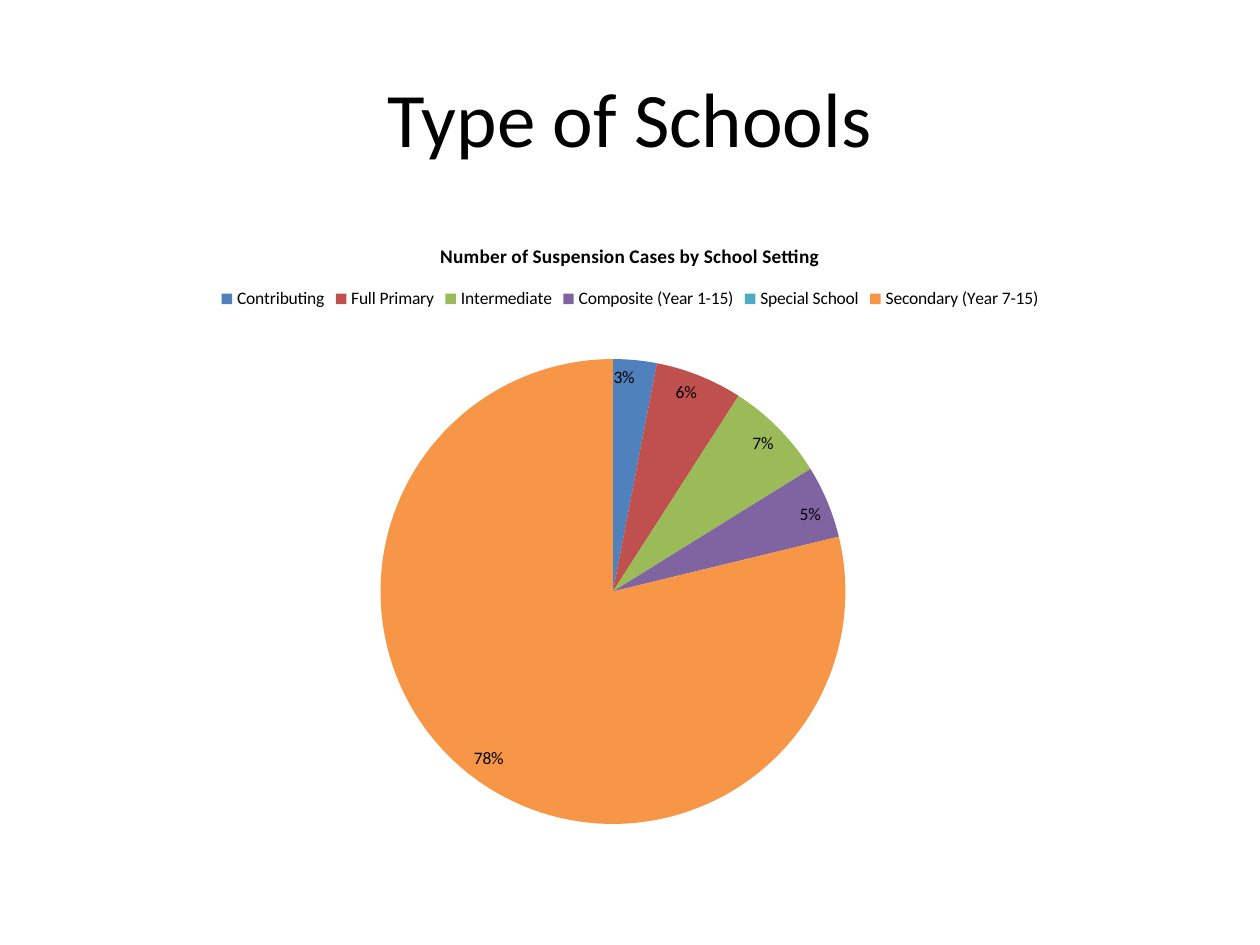
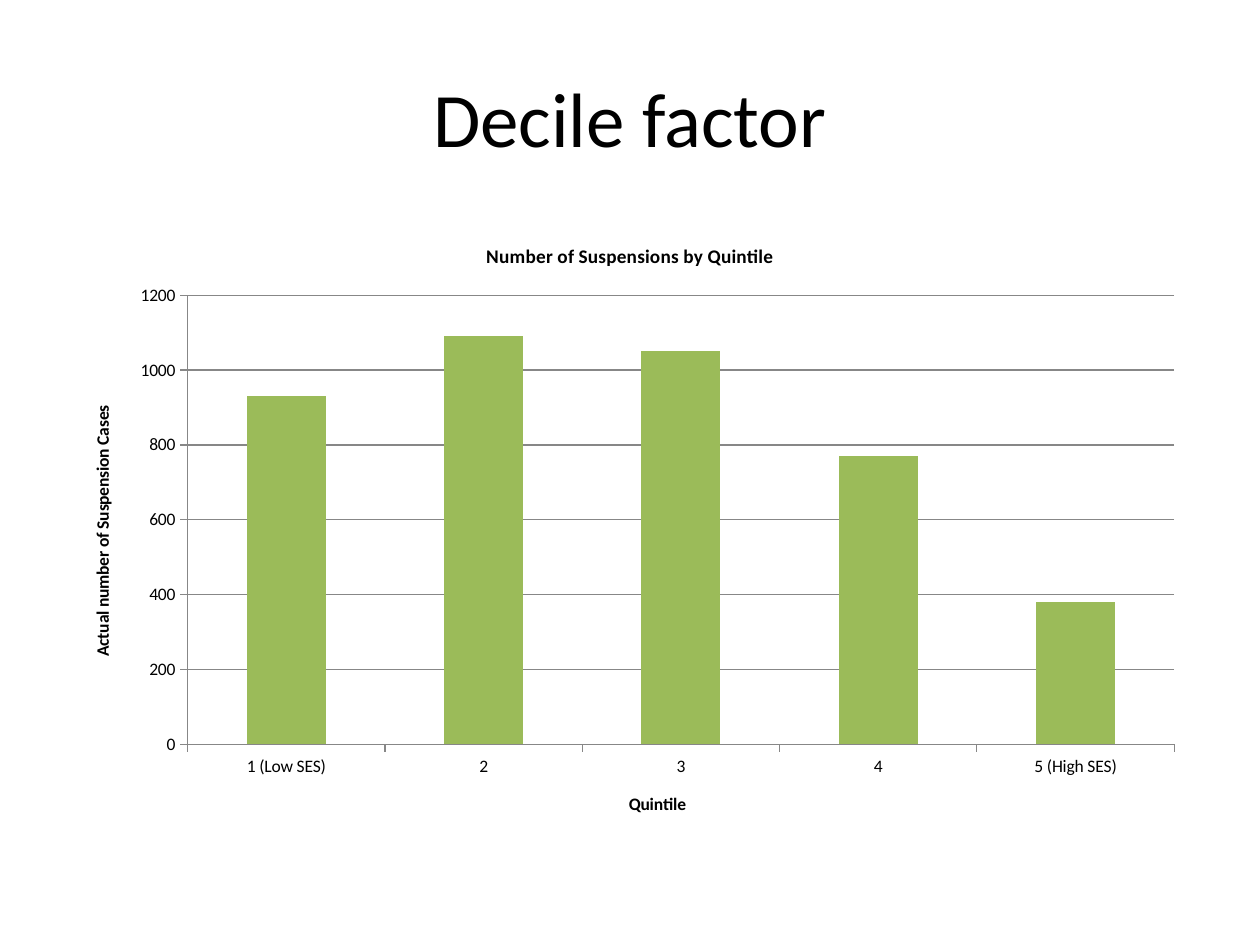
from typing import NamedTuple

from lxml.etree import SubElement
from pptx import Presentation
from pptx.chart.axis import CategoryAxis, ValueAxis
from pptx.chart.chart import Chart
from pptx.chart.data import CategoryChartData
from pptx.dml.color import RGBColor
from pptx.enum.chart import XL_CHART_TYPE, XL_LABEL_POSITION, XL_LEGEND_POSITION, XL_TICK_MARK
from pptx.enum.text import MSO_ANCHOR, PP_ALIGN
from pptx.oxml.ns import qn
from pptx.slide import Slide
from pptx.text.text import Font
from pptx.util import Inches, Pt

# Shared style
FONT = "Calibri"
BLACK = RGBColor(0x00, 0x00, 0x00)
AXIS_GREY = RGBColor(0x87, 0x87, 0x87)
BLUE = RGBColor(0x4F, 0x81, 0xBD)
RED = RGBColor(0xC0, 0x50, 0x4D)
GREEN = RGBColor(0x9B, 0xBB, 0x59)
PURPLE = RGBColor(0x80, 0x64, 0xA2)
TEAL = RGBColor(0x4B, 0xAC, 0xC6)
ORANGE = RGBColor(0xF7, 0x96, 0x46)

# Slide grid: 20 columns by 150 rows
SLIDE_WIDTH, SLIDE_HEIGHT = Inches(10), Inches(7.5)
COLUMN, ROW = SLIDE_WIDTH // 20, SLIDE_HEIGHT // 150


class Area(NamedTuple):
    """A place on the slide grid, or shares of a chart for a plot area."""
    left: float
    top: float
    width: float
    height: float

    def on_grid(self) -> tuple[int, int, int, int]:
        return (int(self.left * COLUMN), int(self.top * ROW),
                int(self.width * COLUMN), int(self.height * ROW))


TITLE_AREA = Area(1, 6, 18, 25)
CHART_AREA = Area(1, 35, 18, 99)


class ChartSlide(NamedTuple):
    heading: str
    chart_title: str
    kind: XL_CHART_TYPE
    values: dict[str, int]
    plot_area: Area
    number_format: str = "General"


SCHOOL_TYPES = ChartSlide(
    "Type of Schools", "Number of Suspension Cases by School Setting", XL_CHART_TYPE.PIE,
    {"Contributing": 3, "Full Primary": 6, "Intermediate": 7, "Composite (Year 1-15)": 5,
     "Special School": 0, "Secondary (Year 7-15)": 78},
    Area(0.28, 0.22, 0.41, 0.75), '0"%"')
SCHOOL_COLOURS = (BLUE, RED, GREEN, PURPLE, TEAL, ORANGE)

DECILES = ChartSlide(
    "Decile factor", "Number of Suspensions by Quintile", XL_CHART_TYPE.COLUMN_CLUSTERED,
    {"1 (Low SES)": 930, "2": 1090, "3": 1050, "4": 770, "5 (High SES)": 380},
    Area(0.11, 0.12, 0.87, 0.72))


def style_font(font: Font, size: float, bold: bool = False) -> None:
    font.name, font.size, font.bold = FONT, Pt(size), bold
    font.color.rgb = BLACK


def add_heading(slide: Slide, text: str) -> None:
    frame = slide.shapes.add_textbox(*TITLE_AREA.on_grid()).text_frame
    frame.word_wrap = True
    frame.vertical_anchor = MSO_ANCHOR.MIDDLE
    heading = frame.paragraphs[0]
    heading.text = text
    heading.alignment = PP_ALIGN.CENTER
    style_font(heading.font, 44)


def place_plot(chart: Chart, area: Area) -> None:
    """Fix the inner plot area as shares of the chart."""
    plot_area = chart.element.find(".//" + qn("c:plotArea"))
    for automatic in plot_area.findall(qn("c:layout")):
        plot_area.remove(automatic)
    layout = SubElement(plot_area, qn("c:layout"))
    plot_area.insert(0, layout)
    manual = SubElement(layout, qn("c:manualLayout"))
    settings = {"layoutTarget": "inner", "xMode": "edge", "yMode": "edge",
                "x": area.left, "y": area.top, "w": area.width, "h": area.height}
    for tag, value in settings.items():
        SubElement(manual, qn(f"c:{tag}")).set("val", str(value))


def add_chart_slide(deck: Presentation, content: ChartSlide) -> Chart:
    slide = deck.slides.add_slide(deck.slide_layouts[6])
    add_heading(slide, content.heading)
    data = CategoryChartData(number_format=content.number_format)
    data.categories = list(content.values)
    data.add_series("Series 1", list(content.values.values()))
    chart = slide.shapes.add_chart(content.kind, *CHART_AREA.on_grid(), data).chart
    style_font(chart.font, 10)
    chart.has_legend = False
    chart.has_title = True
    title = chart.chart_title.text_frame.paragraphs[0]
    title.text = content.chart_title
    style_font(title.font, 11, bold=True)
    place_plot(chart, content.plot_area)
    return chart


def style_axis(axis: CategoryAxis | ValueAxis, title: str) -> None:
    axis.has_title = True
    caption = axis.axis_title.text_frame.paragraphs[0]
    caption.text = title
    style_font(caption.font, 10, bold=True)
    axis.major_tick_mark = XL_TICK_MARK.OUTSIDE
    axis.format.line.color.rgb = AXIS_GREY
    axis.format.line.width = Pt(0.75)


def add_school_types(deck: Presentation) -> None:
    chart = add_chart_slide(deck, SCHOOL_TYPES)
    chart.has_legend = True
    chart.legend.position = XL_LEGEND_POSITION.TOP
    chart.legend.include_in_layout = False
    style_font(chart.legend.font, 10)

    shares = chart.plots[0].series[0]
    labels = shares.data_labels
    labels.show_value = True
    labels.position = XL_LABEL_POSITION.INSIDE_END
    style_font(labels.font, 10)
    for index, colour in enumerate(SCHOOL_COLOURS):
        fill = shares.points[index].format.fill
        fill.solid()
        fill.fore_color.rgb = colour

    # The empty slice has no room for its label
    special_school = list(SCHOOL_TYPES.values).index("Special School")
    special_label = shares.points[special_school].data_label
    special_label.position = XL_LABEL_POSITION.OUTSIDE_END
    style_font(special_label.font, 10)


def add_deciles(deck: Presentation) -> None:
    chart = add_chart_slide(deck, DECILES)
    plot = chart.plots[0]
    plot.gap_width = 150
    plot.vary_by_categories = False
    fill = plot.series[0].format.fill
    fill.solid()
    fill.fore_color.rgb = GREEN

    style_axis(chart.category_axis, "Quintile")
    suspensions = chart.value_axis
    style_axis(suspensions, "Actual number of Suspension Cases")
    suspensions.minimum_scale, suspensions.maximum_scale = 0, 1200
    suspensions.major_unit = 200
    suspensions.has_major_gridlines = True
    suspensions.major_gridlines.format.line.color.rgb = AXIS_GREY
    suspensions.major_gridlines.format.line.width = Pt(0.75)


def main() -> None:
    deck = Presentation()
    deck.slide_width, deck.slide_height = SLIDE_WIDTH, SLIDE_HEIGHT
    add_school_types(deck)
    add_deciles(deck)
    deck.save("out.pptx")


if __name__ == "__main__":
    main()
